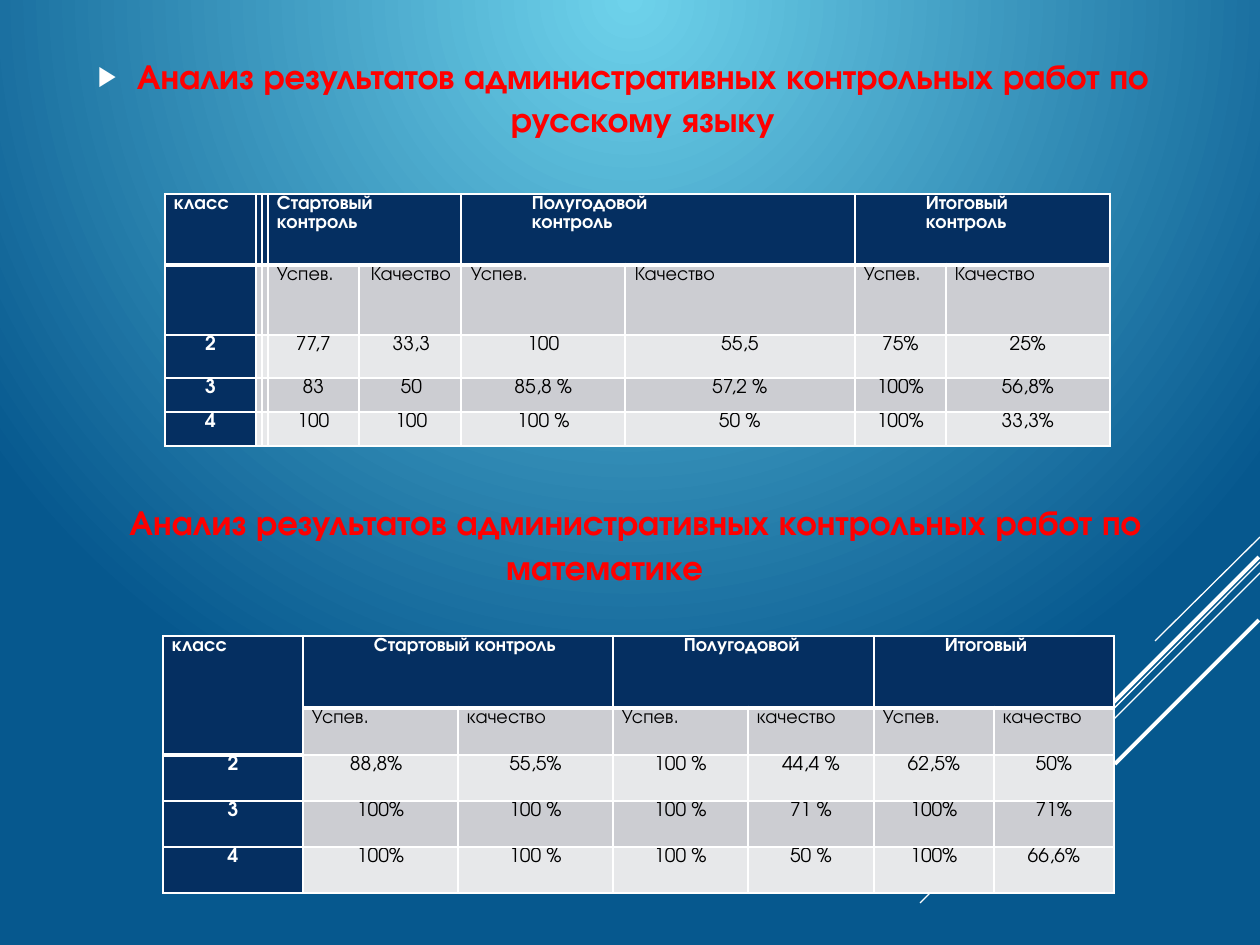
from dataclasses import dataclass, field

from lxml import etree
from pptx import Presentation
from pptx import util as u
from pptx.dml.color import RGBColor
from pptx.enum import shapes, text
from pptx.oxml.ns import qn

EMU_PER_PX = 914400 / 126
FONT = "TeX Gyre Adventor"
COLORS = {
    "white": "FFFFFF", "black": "000000", "heading": "FF0000",
    "header": "052F61", "odd": "CCCDD2", "even": "E7E8EA",
    "glow": "6ED2EB", "deep": "06588E",
}
CELL_INSET = 9
HEADER_INDENT = 62
THIN, HEAVY = 1, 3


@dataclass
class Line:
    start: tuple[int, int]
    end: tuple[int, int]
    points: float = 0.75


@dataclass
class ResultTable:
    left: int
    top: int
    widths: list[int]
    heights: list[int]
    rows: list[list[str]]
    merges: list[tuple[int, int, int, int]]  # first row, first column, last row, last column
    class_rows: int = 1  # rows taken by the top left cell
    indents: dict[tuple[int, int], int] = field(default_factory=dict)


LINES = [
    Line((1260, 537), (1155, 641)),
    Line((1260, 562), (920, 903)),
    Line((1260, 573), (1043, 790)),
    Line((1259, 557), (1061, 755), 2.25),
    Line((1259, 620), (1115, 764), 2.25),
]

RUSSIAN = ResultTable(
    left=165, top=194,
    widths=[91, 6, 6, 91, 102, 164, 230, 91, 164],
    heights=[71, 70, 43, 34, 34],
    rows=[
        ["класс", "", "", "Стартовый\nконтроль", "", "Полугодовой\nконтроль", "",
         "Итоговый\nконтроль", ""],
        ["", "", ""] + ["Успев.", "Качество"] * 3,
        ["2", "", "", "77,7", "33,3", "100", "55,5", "75%", "25%"],
        ["3", "", "", "83", "50", "85,8 %", "57,2 %", "100%", "56,8%"],
        ["4", "", "", "100", "100", "100 %", "50 %", "100%", "33,3%"],
    ],
    merges=[(0, column, 0, column + 1) for column in (3, 5, 7)],
    indents={(0, 5): HEADER_INDENT, (0, 7): HEADER_INDENT, (1, 6): 1,
             **{(row, 4): 3 for row in range(1, 5)},
             **{(row, 5): 1 for row in range(1, 5)}},
)

MATHS = ResultTable(
    left=163, top=636,
    widths=[140, 155, 155, 135, 126, 120, 120],
    heights=[72, 47, 46, 46, 46],
    rows=[
        ["класс", "Стартовый контроль", "", "Полугодовой", "", "Итоговый", ""],
        [""] + ["Успев.", "качество"] * 3,
        ["2", "88,8%", "55,5%", "100 %", "44,4 %", "62,5%", "50%"],
        ["3", "100%", "100 %", "100 %", "71 %", "100%", "71%"],
        ["4", "100%", "100 %", "100 %", "50 %", "100%", "66,6%"],
    ],
    merges=[(0, 0, 1, 0)] + [(0, column, 0, column + 1) for column in (1, 3, 5)],
    class_rows=2,
    indents={**{(0, column): HEADER_INDENT for column in (1, 3, 5)}, (2, 1): 38},
)


def px(length: int) -> int:
    return round(length * EMU_PER_PX)


def rgb(name: str) -> RGBColor:
    return RGBColor.from_string(COLORS[name])


def add_element(parent, tag: str, **attributes):
    return etree.SubElement(parent, qn(tag), {key: str(value) for key, value in attributes.items()})


def format_paragraph(paragraph, size: int, color: str, bold: bool, alignment, indent: int = 0) -> None:
    paragraph.alignment = alignment
    if indent:
        paragraph._p.get_or_add_pPr().set("indent", str(px(indent)))
    for run in paragraph.runs:
        run.font.name, run.font.size, run.font.bold = FONT, u.Pt(size), bold
        run.font.color.rgb = rgb(color)


def paint_background(slide) -> None:
    fill = slide.background.fill
    fill.gradient()
    for stop, position, color in zip(fill.gradient_stops, (0, 1), ("glow", "deep")):
        stop.position = position
        stop.color.rgb = rgb(color)
    gradient = slide.background._cSld.find(".//" + qn("a:gradFill"))
    gradient.remove(gradient.find(qn("a:lin")))
    circle = add_element(gradient, "a:path", path="circle")
    add_element(circle, "a:fillToRect", l=0, t=0, r=0, b=100000)


def add_line(slide, line: Line) -> None:
    connector = slide.shapes.add_connector(
        shapes.MSO_CONNECTOR.STRAIGHT, *map(px, line.start + line.end))
    connector.line.color.rgb = rgb("white")
    connector.line.width = u.Pt(line.points)
    add_element(connector._element.spPr, "a:effectLst")


def set_borders(cell, top: int, bottom: int) -> None:
    properties = cell._tc.get_or_add_tcPr()
    for tag, points in (("a:lnL", THIN), ("a:lnR", THIN), ("a:lnT", top), ("a:lnB", bottom)):
        border = add_element(properties, tag, w=u.Pt(points))
        add_element(add_element(border, "a:solidFill"), "a:srgbClr", val=COLORS["white"])


def format_cell(cell, spec: ResultTable, row: int, column: int) -> None:
    is_dark = row == 0 or column == 0
    last_header_row = spec.class_rows - 1 if column == 0 else 0
    set_borders(cell, HEAVY if row == last_header_row + 1 else THIN,
                HEAVY if row == last_header_row else THIN)
    cell.fill.solid()
    cell.fill.fore_color.rgb = rgb("header" if is_dark else "odd" if row % 2 else "even")
    content = spec.rows[row][column]
    cell.margin_left = cell.margin_right = px(CELL_INSET) if content else 0
    cell.margin_top = cell.margin_bottom = 0
    if not content:
        add_element(cell.text_frame.paragraphs[0]._p, "a:endParaRPr", sz=1100)
        return
    cell.text_frame.text = content
    indent = spec.indents.get((row, column), 0)
    starts_left = row < 2 or indent > CELL_INSET
    alignment = text.PP_ALIGN.JUSTIFY if starts_left else text.PP_ALIGN.CENTER
    for paragraph in cell.text_frame.paragraphs:
        paragraph.line_spacing = 1.07
        format_paragraph(paragraph, 11, "white" if is_dark else "black", is_dark, alignment, indent)


def add_result_table(slide, spec: ResultTable) -> None:
    frame = slide.shapes.add_table(
        len(spec.heights), len(spec.widths), px(spec.left), px(spec.top),
        px(sum(spec.widths)), px(sum(spec.heights)))
    table = frame.table
    table.horz_banding = table.first_row = False
    for column, width in zip(table.columns, spec.widths):
        column.width = px(width)
    for row, height in zip(table.rows, spec.heights):
        row.height = px(height)
    for row in range(len(spec.heights)):
        for column in range(len(spec.widths)):
            format_cell(table.cell(row, column), spec, row, column)
    for top, left, bottom, right in spec.merges:
        table.cell(top, left).merge(table.cell(bottom, right))


def fill_russian_heading(body) -> None:
    body.left, body.top, body.width, body.height = map(px, (50, 39, 1147, 116))
    frame = body.text_frame
    frame.text = "Анализ результатов административных контрольных работ по русскому языку"
    frame.auto_size = text.MSO_AUTO_SIZE.NONE
    frame.vertical_anchor = text.MSO_ANCHOR.MIDDLE
    paragraph = frame.paragraphs[0]
    paragraph.space_after = u.Pt(6)
    format_paragraph(paragraph, 20, "heading", True, text.PP_ALIGN.CENTER, -39)
    properties = paragraph._p.get_or_add_pPr()
    properties.set("marL", str(px(39)))
    add_element(add_element(properties, "a:buClr"), "a:srgbClr", val=COLORS["white"])
    add_element(properties, "a:buSzPct", val=80000)
    add_element(properties, "a:buChar", char="▶")


def add_maths_heading(slide) -> None:
    box = slide.shapes.add_textbox(*map(px, (50, 491, 1109, 100)))
    frame = box.text_frame
    frame.word_wrap = True
    frame.auto_size = text.MSO_AUTO_SIZE.SHAPE_TO_FIT_TEXT
    frame.text = "Анализ результатов административных контрольных работ по математике"
    paragraph = frame.paragraphs[0]
    paragraph.line_spacing = 1.07
    format_paragraph(paragraph, 20, "heading", True, text.PP_ALIGN.CENTER, HEADER_INDENT)


def main() -> None:
    presentation = Presentation()
    presentation.slide_width, presentation.slide_height = px(1260), px(945)
    slide = presentation.slides.add_slide(presentation.slide_layouts[1])
    title = slide.shapes.title._element
    title.getparent().remove(title)
    paint_background(slide)
    for line in LINES:
        add_line(slide, line)
    fill_russian_heading(slide.placeholders[1])
    add_result_table(slide, RUSSIAN)
    add_maths_heading(slide)
    add_result_table(slide, MATHS)
    presentation.save("out.pptx")


if __name__ == "__main__":
    main()
